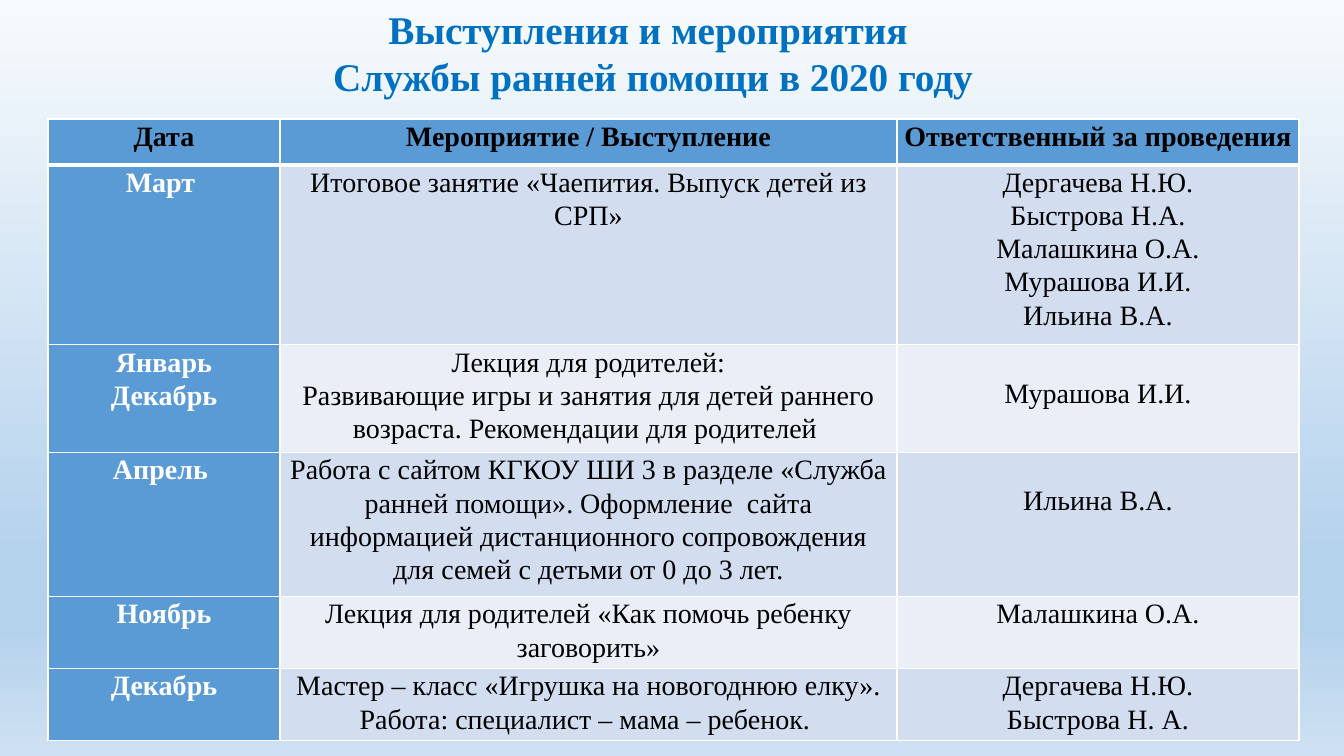
from lxml import etree
from pptx import Presentation
from pptx import util as u
from pptx.dml.color import RGBColor
from pptx.enum import text
from pptx.oxml import ns

EMU_PER_PX = 914400 / 100.8
TITLE_BLUE = RGBColor(0x00, 0x70, 0xC0)
HEADER_BLUE = RGBColor(0x5B, 0x9B, 0xD5)
BAND_DARK = RGBColor(0xD2, 0xDE, 0xEF)
BAND_LIGHT = RGBColor(0xEA, 0xEF, 0xF7)
SKY_TOP = RGBColor(0xF7, 0xFA, 0xFD)
SKY_MIDDLE = RGBColor(0xB5, 0xD2, 0xEC)
SKY_BOTTOM = RGBColor(0xCE, 0xE1, 0xF2)
BLACK = RGBColor(0, 0, 0)
WHITE = RGBColor(0xFF, 0xFF, 0xFF)

SKY = [(0, SKY_TOP), (74, SKY_MIDDLE), (83, SKY_MIDDLE), (100, SKY_BOTTOM)]
TITLE = ["Выступления и мероприятия", " Службы ранней помощи в 2020 году"]
COLUMN_WIDTHS = [232, 617, 402]
ROW_HEIGHTS = [46, 179, 108, 144, 72, 72]
LOWERED_CELLS = {(2, 2), (3, 2)}
EVENTS = [
    [["Дата"], ["Мероприятие / Выступление"], ["Ответственный за проведения"]],
    [["Март "], ["Итоговое занятие «Чаепития. Выпуск детей из СРП»"],
     ["Дергачева Н.Ю.", "Быстрова Н.А.", "Малашкина О.А.", "Мурашова И.И.", "Ильина В.А."]],
    [["Январь", "Декабрь"],
     ["Лекция для родителей:",
      "Развивающие игры и занятия для детей раннего возраста. Рекомендации для родителей "],
     ["Мурашова И.И."]],
    [["Апрель "],
     ["Работа с сайтом КГКОУ ШИ 3 в разделе «Служба ранней помощи». Оформление  сайта "
      "информацией дистанционного сопровождения для семей с детьми от 0 до 3 лет."],
     ["Ильина В.А."]],
    [["Ноябрь"], ["Лекция для родителей «Как помочь ребенку заговорить»"], ["Малашкина О.А."]],
    [["Декабрь"],
     ["Мастер – класс «Игрушка на новогоднюю елку». Работа: специалист – мама – ребенок. "],
     ["Дергачева Н.Ю.", "Быстрова Н. А."]],
]


def px(length):
    """Turn whole pixels into EMU."""
    return u.Emu(round(length * EMU_PER_PX))


def write(frame, lines, size=20, color=BLACK, bold=False, spacing=1.0):
    """Fill a text frame with centred paragraphs in one format."""
    frame.word_wrap = True
    for index, line in enumerate(lines):
        para = frame.add_paragraph() if index else frame.paragraphs[0]
        para.alignment = text.PP_ALIGN.CENTER
        para.line_spacing = spacing
        span = para.add_run()
        span.text = line
        span.font.name = "Times New Roman"
        span.font.size = u.Pt(size)
        span.font.bold = bold
        span.font.color.rgb = color


class SlideBuilder:
    """Hold the deck, its current page and the shared table style."""

    def __init__(self):
        """Start a deck with one blank page."""
        self.deck = Presentation()
        self.deck.slide_width, self.deck.slide_height = px(1344), px(756)
        self.page = self.deck.slides.add_slide(self.deck.slide_layouts[6])

    def background(self, stops):
        """Paint a top-to-bottom gradient behind the page."""
        fill = self.page.background.fill
        fill.gradient()
        fill.gradient_angle = 270
        stop_list = self.page.background._cSld.find(".//" + ns.qn("a:gsLst"))
        for old in list(stop_list):
            stop_list.remove(old)
        for percent, color in stops:
            stop = etree.SubElement(stop_list, ns.qn("a:gs"), pos=str(percent * 1000))
            etree.SubElement(stop, ns.qn("a:srgbClr"), val=str(color))

    def label(self, lines, left, top, width, height, **style):
        """Add a text box."""
        box = self.page.shapes.add_textbox(px(left), px(top), px(width), px(height))
        box.text_frame.auto_size = text.MSO_AUTO_SIZE.SHAPE_TO_FIT_TEXT
        write(box.text_frame, lines, **style)

    def border(self, cell, **widths):
        """Draw white cell borders with a width in points for each side."""
        properties = cell._tc.get_or_add_tcPr()
        for side, width in widths.items():
            line = etree.SubElement(properties, ns.qn("a:ln" + side), w=str(u.Pt(width)))
            paint = etree.SubElement(line, ns.qn("a:solidFill"))
            etree.SubElement(paint, ns.qn("a:srgbClr"), val=str(WHITE))

    def cell(self, cell, lines, row, column):
        """Style and fill one cell by its place in the table."""
        heading = row == 0 or column == 0
        cell.margin_left = cell.margin_right = px(6)
        cell.margin_top = px(31 if (row, column) in LOWERED_CELLS else 0)
        cell.margin_bottom = 0
        self.border(cell, L=1, R=1, T=3 if row == 1 else 1, B=1 if row else 3)
        cell.fill.solid()
        band = BAND_DARK if row % 2 else BAND_LIGHT
        cell.fill.fore_color.rgb = HEADER_BLUE if heading else band
        color = WHITE if row and column == 0 else BLACK
        write(cell.text_frame, lines, color=color, bold=heading, spacing=1.07)

    def table(self, rows, left, top, widths, heights):
        """Add a table with a header row and a header column."""
        table = self.page.shapes.add_table(
            len(heights), len(widths), px(left), px(top), px(sum(widths)), px(sum(heights))).table
        for column, width in zip(table.columns, widths):
            column.width = px(width)
        for row, height in zip(table.rows, heights):
            row.height = px(height)
        for row, entries in enumerate(rows):
            for column, lines in enumerate(entries):
                self.cell(table.cell(row, column), lines, row, column)


def main():
    """Build the events slide and save it."""
    slide = SlideBuilder()
    slide.background(SKY)
    slide.label(TITLE, 72, 0, 1152, 105, size=28, color=TITLE_BLUE, bold=True)
    slide.table(EVENTS, 48, 119, COLUMN_WIDTHS, ROW_HEIGHTS)
    slide.deck.save("out.pptx")


if __name__ == "__main__":
    main()
